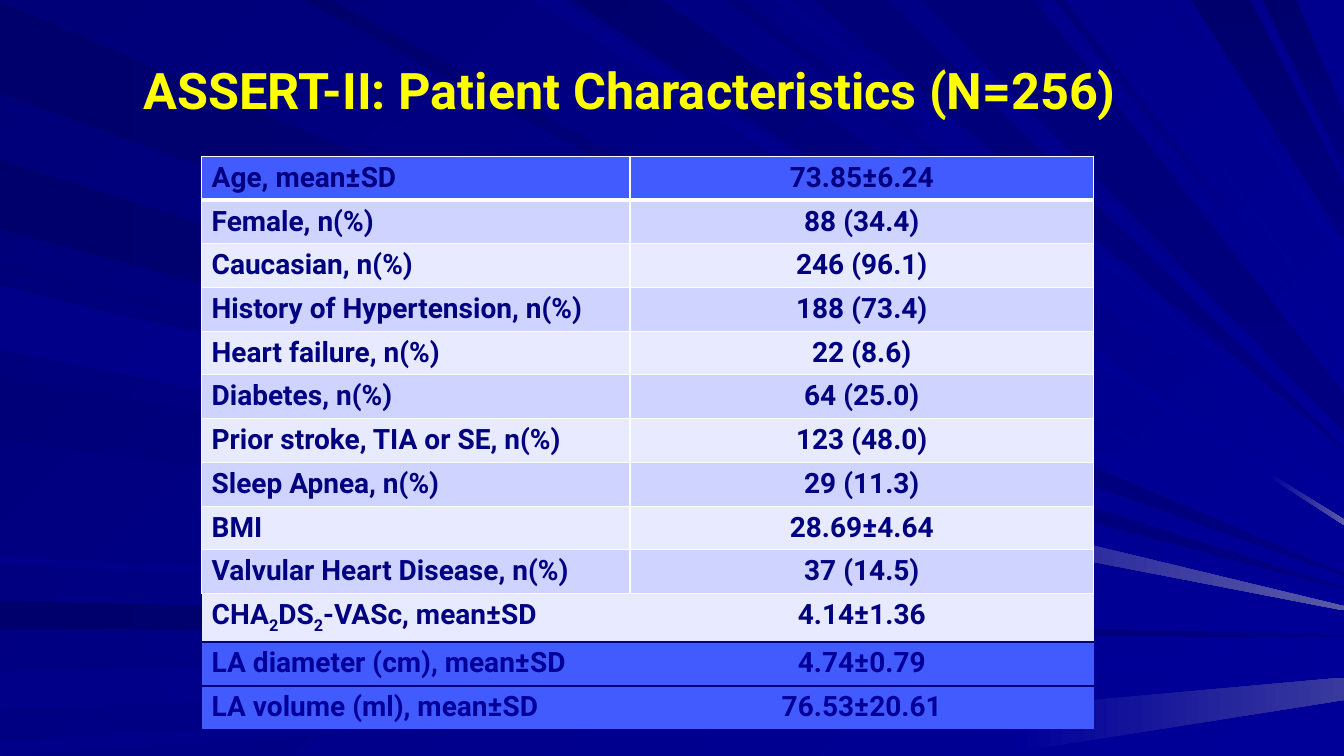
from lxml import etree
from pptx import Presentation
from pptx.dml.color import RGBColor
from pptx.enum.text import MSO_ANCHOR, PP_ALIGN
from pptx.oxml.ns import qn
from pptx.util import Pt

TITLE = "ASSERT-II: Patient Characteristics (N=256)"
# Digits between underscores are subscripts
ROWS = [
    ("Age, mean±SD", "73.85±6.24"),
    ("Female, n(%)", "88 (34.4)"),
    ("Caucasian, n(%)", "246 (96.1)"),
    ("History of Hypertension, n(%)", "188 (73.4)"),
    ("Heart failure, n(%)", "22 (8.6)"),
    ("Diabetes, n(%)", "64 (25.0)"),
    ("Prior stroke, TIA or SE, n(%)", "123 (48.0)"),
    ("Sleep Apnea, n(%)", "29 (11.3)"),
    ("BMI", "28.69±4.64"),
    ("Valvular Heart Disease, n(%)", "37 (14.5)"),
    ("CHA_2_DS_2_-VASc, mean±SD", "4.14±1.36"),
    ("LA diameter (cm), mean±SD", "4.74±0.79"),
    ("LA volume (ml), mean±SD", "76.53±20.61"),
]
SCORE_ROW = 10  # from here on the rows have no vertical rules
LA_ROW = 11     # from here on the rows are bright blue

FONT = "Roboto"
YELLOW = RGBColor(0xFF, 0xFF, 0x00)
WHITE = RGBColor(0xFF, 0xFF, 0xFF)
NAVY = RGBColor(0x00, 0x00, 0x80)
BLUE = RGBColor(0x00, 0x00, 0x99)
BRIGHT = RGBColor(0x42, 0x5B, 0xFF)
BANDS = [RGBColor(0xE8, 0xEA, 0xFF), RGBColor(0xCE, 0xD3, 0xFF)]
DEEP = RGBColor(0x00, 0x00, 0x6D)
DUSK = RGBColor(0x00, 0x00, 0x78)
SOFT = RGBColor(0x00, 0x00, 0x88)
GLOW = RGBColor(0x5A, 0x5A, 0xA6)
HAZE = RGBColor(0x39, 0x39, 0x9E)

WIDTH, HEIGHT = 960, 540
# Rays to the right edge, back to front: colours, start from-to, end on the right edge, end width
LEFT_RAYS = [
    (DEEP, NAVY, 1, 67, 410, 1),
    (DEEP, NAVY, 429, 449, 454, 1),
    (SOFT, BLUE, 479, 507, 463, 6),
    (SOFT, BLUE, 529, 540, 476, 1),
    (DUSK, BLUE, 186, 194, 424, 1),
    (DEEP, NAVY, 114, 164, 420, 1),
]
TOP_RAYS = [
    (DUSK, BLUE, 24, 97, 405, 1),
    (SOFT, BLUE, 382, 400, 371, 4),
    (DEEP, BLUE, 409, 473, 345, 20),
    (DUSK, BLUE, 518, 530, 333, 1),
    (DUSK, NAVY, 581, 634, 320, 1),
    (DEEP, NAVY, 851, 893, 132, 39),
    (DEEP, NAVY, 902, 926, 82, 38),
    (DEEP, BLUE, 216, 237, 394, 4),
    (SOFT, BLUE, 554, 565, 326, 1),
    (DUSK, NAVY, 658, 739, 281, 27),
    (DUSK, BLUE, 753, 760, 255, 4),
    (SOFT, BLUE, 783, 791, 241, 1),
    (SOFT, BLUE, 830, 837, 179, 7),
]
FRONT_RAYS = [
    (DUSK, BLUE, 200, 246, 429, 4),
    (DUSK, BLUE, 269, 315, 435, 1),
    (SOFT, BLUE, 397, 403, 447, 2),
    (SOFT, BLUE, 204, 250, 433, 3),
]
# Glowing ends of rays, each starting at its own x
GLOWS = [
    (726, (BLUE, HAZE, 505, 537, 484, 16)),
    (907, (BLUE, GLOW, 338, 341, 371, 4)),
    (608, (BLUE, GLOW, 348, 368, 433, 3)),
]


def paint(fill, first, last, angle):
    """Fill with a clockwise linear gradient."""
    fill.gradient()
    fill.gradient_angle = -angle % 360
    for stop, color in zip(fill.gradient_stops, (first, last)):
        stop.color.rgb = color


def add_ray(s, ray, x=0, from_top=False):
    first, last, a, b, end, spread = ray
    start = [(b, 0), (a, 0)] if from_top else [(x, a), (x, b)]
    corners = start + [(WIDTH, end + spread), (WIDTH, end)]
    points = [(Pt(px), Pt(py)) for px, py in corners]
    builder = s.shapes.build_freeform(*points[0])
    builder.add_line_segments(points[1:], close=True)
    shape = builder.convert_to_shape()
    shape.shadow.inherit = False
    shape.line.fill.background()
    if last == NAVY:
        angle = 90 if from_top else 0
    else:
        angle = 45 if from_top or end - a > 100 else 0
    paint(shape.fill, first, last, angle)


def set_font(p, size, color):
    p.font.name, p.font.size, p.font.bold = FONT, Pt(size), True
    p.font.color.rgb = color


def set_borders(cell, borders):
    """Borders are (colour, width) or None, in the order left, right, top, bottom."""
    tcPr = cell._tc.get_or_add_tcPr()
    for i, (side, border) in enumerate(zip("LRTB", borders)):
        ln = etree.Element(qn(f"a:ln{side}"))
        if border:
            color, width = border
            ln.set("w", str(Pt(width)))
            solid = etree.SubElement(ln, qn("a:solidFill"))
            etree.SubElement(solid, qn("a:srgbClr"), val=str(color))
        else:
            etree.SubElement(ln, qn("a:noFill"))
        tcPr.insert(i, ln)


def rule_above(row):
    """Border along the top of a row."""
    if row == len(ROWS):
        return None
    if row >= LA_ROW:
        return NAVY, 1.5
    return WHITE, 3 if row == 1 else 1


def add_patient_table(s):
    table = s.shapes.add_table(len(ROWS), 2, Pt(144), Pt(111.6), Pt(637.2), Pt(397.8)).table
    table.first_row = table.horz_banding = False
    table.columns[0].width, table.columns[1].width = Pt(306), Pt(331.2)
    for i, texts in enumerate(ROWS):
        table.rows[i].height = Pt(30.6)
        side = (WHITE, 1) if i < SCORE_ROW else None
        for j, text in enumerate(texts):
            cell = table.cell(i, j)
            cell.fill.solid()
            cell.fill.fore_color.rgb = BRIGHT if i == 0 or i >= LA_ROW else BANDS[i % 2]
            set_borders(cell, (side, side, rule_above(i), rule_above(i + 1)))
            p = cell.text_frame.paragraphs[0]
            p.alignment = PP_ALIGN.CENTER if j else PP_ALIGN.LEFT
            set_font(p, 20, BLUE if i >= LA_ROW else NAVY)
            for k, part in enumerate(text.split("_")):
                r = p.add_run()
                r.text = part
                if k % 2:
                    r._r.get_or_add_rPr().set("baseline", "-25000")


def main():
    prs = Presentation()
    prs.slide_width, prs.slide_height = Pt(WIDTH), Pt(HEIGHT)
    s = prs.slides.add_slide(prs.slide_layouts[6])
    paint(s.background.fill, DUSK, BLUE, 45)
    for ray in LEFT_RAYS:
        add_ray(s, ray)
    for ray in TOP_RAYS:
        add_ray(s, ray, from_top=True)
    for ray in FRONT_RAYS:
        add_ray(s, ray)
    for x, ray in GLOWS:
        add_ray(s, ray, x)

    tf = s.shapes.add_textbox(Pt(36), Pt(11.5), Pt(828), Pt(104.4)).text_frame
    tf.word_wrap = True
    tf.vertical_anchor = MSO_ANCHOR.MIDDLE
    p = tf.paragraphs[0]
    p.text = TITLE
    p.alignment = PP_ALIGN.CENTER
    set_font(p, 36, YELLOW)

    add_patient_table(s)
    prs.save("out.pptx")


if __name__ == "__main__":
    main()
